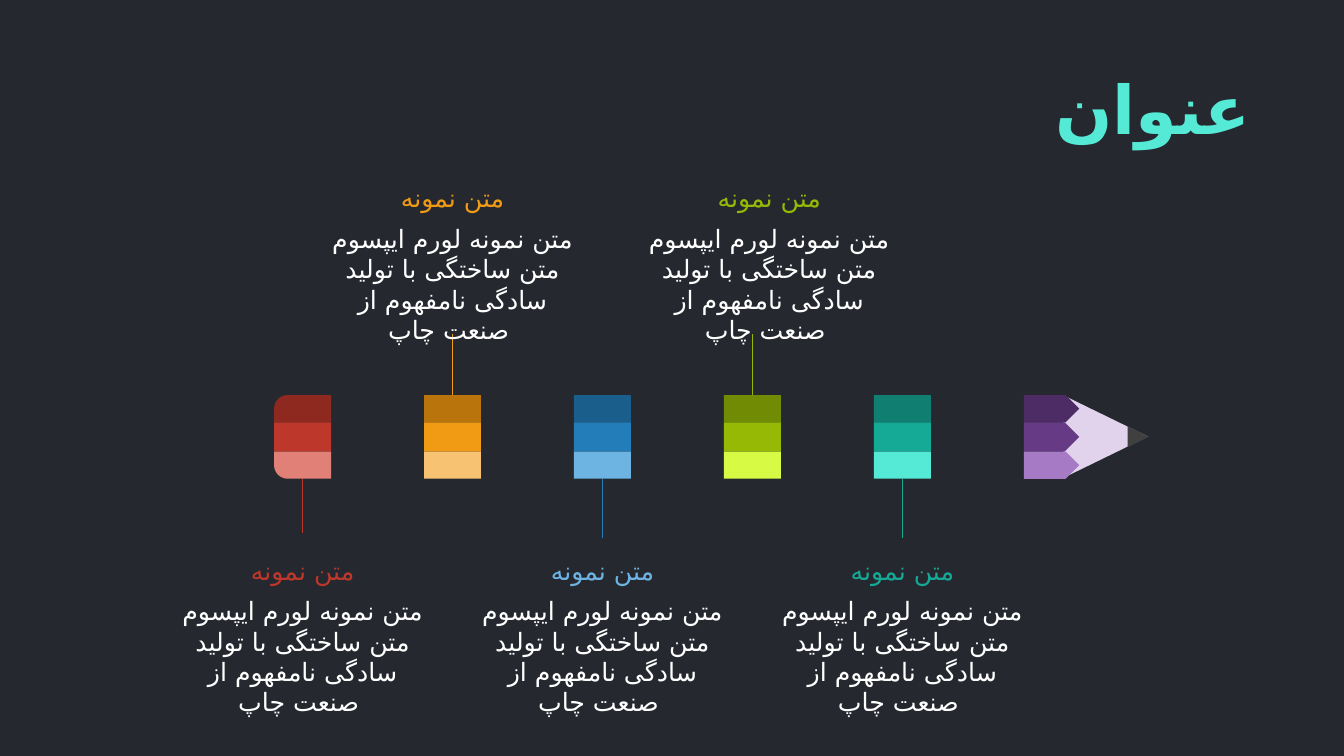
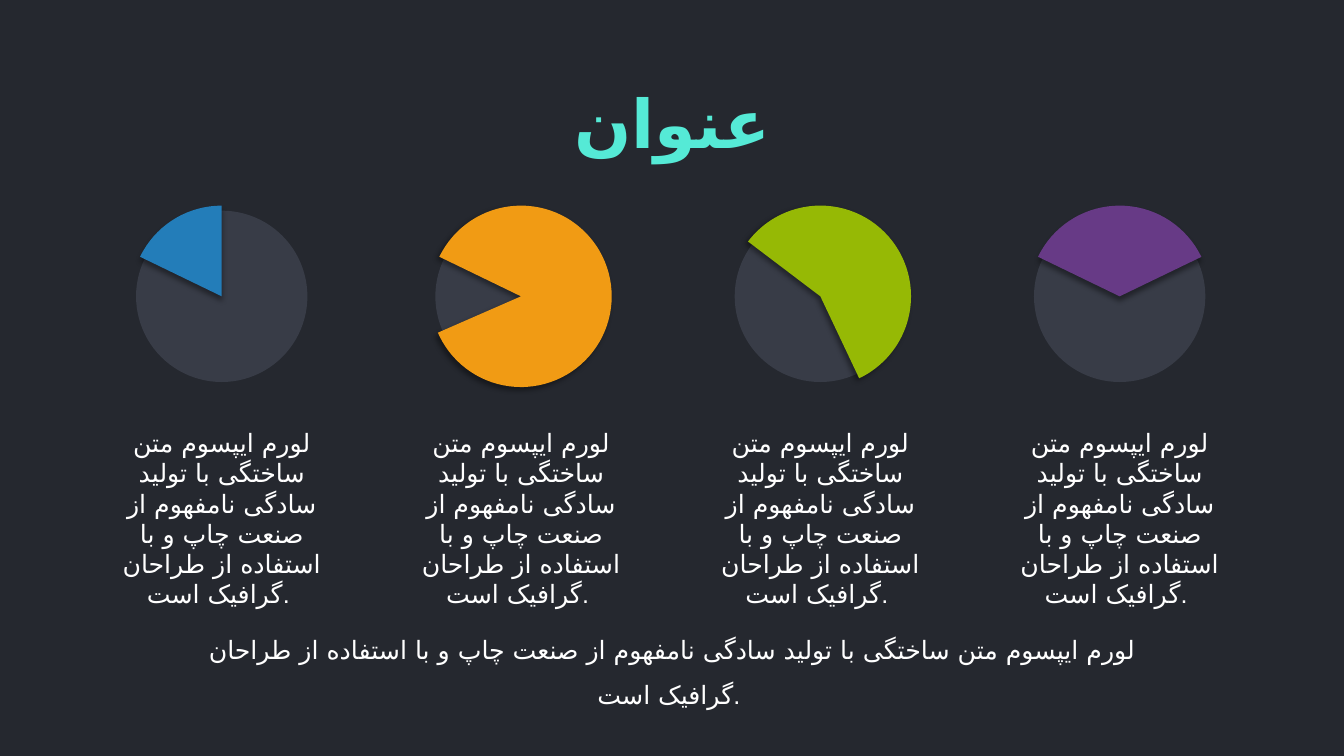
from dataclasses import dataclass

import lxml.etree
import pptx
import pptx.dml.color
import pptx.enum.shapes
import pptx.enum.text
import pptx.oxml.ns
import pptx.util

Pt = pptx.util.Pt
Shape = pptx.enum.shapes.MSO_SHAPE
Align = pptx.enum.text.PP_ALIGN
Fit = pptx.enum.text.MSO_AUTO_SIZE
qn = pptx.oxml.ns.qn

# Shared look
FONT = "Arial"
PERSIAN_FONT = "DejaVu Sans"
BACKGROUND = "25282F"
ACCENT = "55EAD6"
WHITE = "FFFFFF"
DISC = "383C47"
TITLE_FONT = {"name": FONT, "size": Pt(48), "bold": True}
TEXT_FONT = {"name": FONT, "size": Pt(18)}
TEXT_FRAME = {"word_wrap": True, "auto_size": Fit.SHAPE_TO_FIT_TEXT}
TITLE_FRAME = {"word_wrap": True, "auto_size": Fit.NONE,
               "vertical_anchor": pptx.enum.text.MSO_ANCHOR.MIDDLE}

# Wording
TITLE = "عنوان"
HEADING = "متن نمونه"
SEGMENT_TEXT = "متن نمونه لورم ایپسوم متن ساختگی با تولید سادگی نامفهوم از صنعت چاپ "
PIE_TEXT = ("لورم ایپسوم متن ساختگی با تولید سادگی نامفهوم از صنعت چاپ "
            "و با استفاده از طراحان گرافیک است. ")

# Pencil grid
SEGMENT_LEFT, SEGMENT_PITCH, SEGMENT_WIDTH = 195.8, 107.1, 40.7
BAND_TOP = 282.2
BAND_HEIGHTS = (19.5, 20.9, 19.4)

# Pie grid
PIE_CENTRE, PIE_PITCH, PIE_MIDDLE = 158.4, 213.8, 211.7
DISC_SIZE, PIE_SIZE = 122.4, 129.6


@dataclass(frozen=True)
class Box:
    left: float
    top: float
    width: float
    height: float

    def lengths(self) -> list:
        return [Pt(v) for v in (self.left, self.top, self.width, self.height)]


@dataclass(frozen=True)
class Segment:
    colours: tuple[str, str, str]
    heading_colour: str
    line_end: float
    heading_top: float
    text_shift: float = 0
    rounded: bool = False


@dataclass(frozen=True)
class Pie:
    colour: str
    start: float
    end: float
    shadow_angle: int


SEGMENTS = (
    Segment(("8E2920", "BD372B", "E08077"), "BD372B", 380.9, 393, rounded=True),
    Segment(("B9750B", "F19B14", "F7C372"), "F19B14", 238.3, 127),
    Segment(("1A5E8B", "237DB9", "6DB4E3"), "6DB4E3", 384.5, 393),
    Segment(("718B04", "96B905", "D7FA44"), "96B905", 238.3, 127, text_shift=12),
    Segment(("107F71", "15AA96", "55EAD6"), "15AA96", 384.5, 393),
)
TIP_COLOURS = ("4D2B65", "673A86", "A77AC5")

PIES = (
    Pie("237DB9", 205.85, 270, 90),
    Pie("F19B14", 205.85, 156.38, 135),
    Pie("96B905", 217.14, 64.66, 135),
    Pie("673A86", 205.85, 334.24, 90),
)


def rgb(colour: str) -> pptx.dml.color.RGBColor:
    return pptx.dml.color.RGBColor.from_string(colour)


def apply(obj, values: dict) -> None:
    for name, value in values.items():
        setattr(obj, name, value)


def write(tf, text: str, colour: str, font: dict, frame: dict, paragraph: dict):
    """Fill a text frame with one formatted paragraph."""
    apply(tf, frame)
    p = tf.paragraphs[0]
    apply(p, paragraph)
    r = p.add_run()
    r.text = text
    apply(r.font, font)
    r.font.color.rgb = rgb(colour)
    # Persian letters take the complex-script font
    cs = lxml.etree.SubElement(r.font._element, qn("a:cs"))
    cs.set("typeface", PERSIAN_FONT)
    return p


def add_title(slide, box: Box, align, rtl: bool = False) -> None:
    sp = slide.shapes.title
    for name, value in zip(("left", "top", "width", "height"), box.lengths()):
        setattr(sp, name, value)
    p = write(sp.text_frame, TITLE, ACCENT, TITLE_FONT, TITLE_FRAME,
              {"alignment": align})
    if rtl:
        p._p.get_or_add_pPr().set("rtl", "1")


def add_text(slide, box: Box, text: str, colour: str = WHITE, **paragraph) -> None:
    sp = slide.shapes.add_textbox(*box.lengths())
    write(sp.text_frame, text, colour, TEXT_FONT, TEXT_FRAME,
          {"alignment": Align.CENTER, **paragraph})


def add_shape(slide, kind, box: Box, colour: str, rotation: float = 0):
    sp = slide.shapes.add_shape(kind, *box.lengths())
    sp.fill.solid()
    sp.fill.fore_color.rgb = rgb(colour)
    sp.line.fill.background()
    sp.shadow.inherit = False
    sp.rotation = rotation
    return sp


def add_bands(slide, left: float, width: float, kinds: tuple, colours: tuple) -> list:
    """Stack three bands into one piece of the pencil."""
    bands, top = [], BAND_TOP
    for kind, height, colour in zip(kinds, BAND_HEIGHTS, colours):
        bands.append(add_shape(slide, kind, Box(left, top, width, height), colour))
        top += height
    return bands


def round_left_corners(bands: list) -> None:
    for sp, flips in ((bands[0], ("flipH",)), (bands[2], ("flipH", "flipV"))):
        sp.adjustments[0] = 0.5
        for flip in flips:
            sp._element.spPr.find(qn("a:xfrm")).set(flip, "1")


def add_leader(slide, segment: Segment, centre: float, bands: list) -> None:
    """Draw the line from a segment towards its text."""
    upward = segment.line_end < BAND_TOP
    start = BAND_TOP if upward else BAND_TOP + sum(BAND_HEIGHTS)
    line = slide.shapes.add_connector(
        pptx.enum.shapes.MSO_CONNECTOR.STRAIGHT,
        Pt(centre), Pt(start), Pt(centre), Pt(segment.line_end))
    line.line.width = Pt(0.5)
    line.line.color.rgb = rgb(segment.colours[1])
    lxml.etree.SubElement(line._element.spPr, qn("a:effectLst"))
    if not segment.rounded:
        line.begin_connect(bands[0 if upward else 2], 0 if upward else 2)


def add_segment(slide, index: int, segment: Segment) -> None:
    left = SEGMENT_LEFT + index * SEGMENT_PITCH
    centre = left + SEGMENT_WIDTH / 2
    outer = Shape.ROUND_1_RECTANGLE if segment.rounded else Shape.RECTANGLE
    bands = add_bands(slide, left, SEGMENT_WIDTH,
                      (outer, Shape.RECTANGLE, outer), segment.colours)
    if segment.rounded:
        round_left_corners(bands)
    add_leader(slide, segment, centre, bands)

    middle = centre + segment.text_shift
    add_text(slide, Box(middle - 95.4, segment.heading_top + 29, 190.8, 72.7),
             SEGMENT_TEXT)
    add_text(slide, Box(middle - 69.8, segment.heading_top, 139.6, 29),
             HEADING, segment.heading_colour)


def add_shadow(sp, angle: int) -> None:
    effects = sp._element.spPr.find(qn("a:effectLst"))
    shadow = lxml.etree.SubElement(effects, qn("a:outerShdw"))
    for name, value in {"blurRad": Pt(4), "dist": Pt(3), "dir": angle * 60000,
                        "algn": "ctr", "rotWithShape": 0}.items():
        shadow.set(name, str(value))
    colour = lxml.etree.SubElement(shadow, qn("a:srgbClr"))
    colour.set("val", "000000")
    lxml.etree.SubElement(colour, qn("a:alpha")).set("val", "40000")


def add_pie(slide, index: int, pie: Pie) -> None:
    centre = PIE_CENTRE + index * PIE_PITCH

    def square(size: float) -> Box:
        return Box(centre - size / 2, PIE_MIDDLE - size / 2, size, size)

    add_shape(slide, Shape.OVAL, square(DISC_SIZE), DISC)
    sp = add_shape(slide, Shape.PIE, square(PIE_SIZE), pie.colour)
    # Angles are stored in 60000ths of a degree, adjustments in 100000ths
    for i, angle in enumerate((pie.start, pie.end)):
        sp.adjustments[i] = angle * 0.6
    add_shadow(sp, pie.shadow_angle)
    add_text(slide, Box(centre - 91.4, 301.7, 182.8, 94.3), PIE_TEXT)


def build_pencil_slide(prs) -> None:
    slide = prs.slides.add_slide(prs.slide_layouts[5])
    add_title(slide, Box(46.8, 27.4, 853.9, 99.4), Align.RIGHT, rtl=True)
    # Sharpened end
    add_shape(slide, Shape.ISOSCELES_TRIANGLE, Box(760.3, 281.6, 59, 60.5), "E2D3EC", 90)
    add_shape(slide, Shape.ISOSCELES_TRIANGLE, Box(805.4, 304.4, 15.1, 15.1), "404040", 90)
    add_bands(slide, SEGMENT_LEFT + len(SEGMENTS) * SEGMENT_PITCH, 39.6,
              (Shape.PENTAGON,) * 3, TIP_COLOURS)
    # Body with its texts
    for index, segment in enumerate(SEGMENTS):
        add_segment(slide, index, segment)


def build_pie_slide(prs) -> None:
    slide = prs.slides.add_slide(prs.slide_layouts[5])
    add_title(slide, Box(270, 37.4, 420.5, 99.4), Align.CENTER)
    for index, pie in enumerate(PIES):
        add_pie(slide, index, pie)
    # Closing sentence
    add_text(slide, Box(131.8, 438.5, 697, 36), PIE_TEXT, line_spacing=1.5)


def main() -> None:
    prs = pptx.Presentation()
    apply(prs, {"slide_width": Pt(960), "slide_height": Pt(540)})
    fill = prs.slide_master.background.fill
    fill.solid()
    fill.fore_color.rgb = rgb(BACKGROUND)
    build_pencil_slide(prs)
    build_pie_slide(prs)
    prs.save("out.pptx")


if __name__ == "__main__":
    main()
